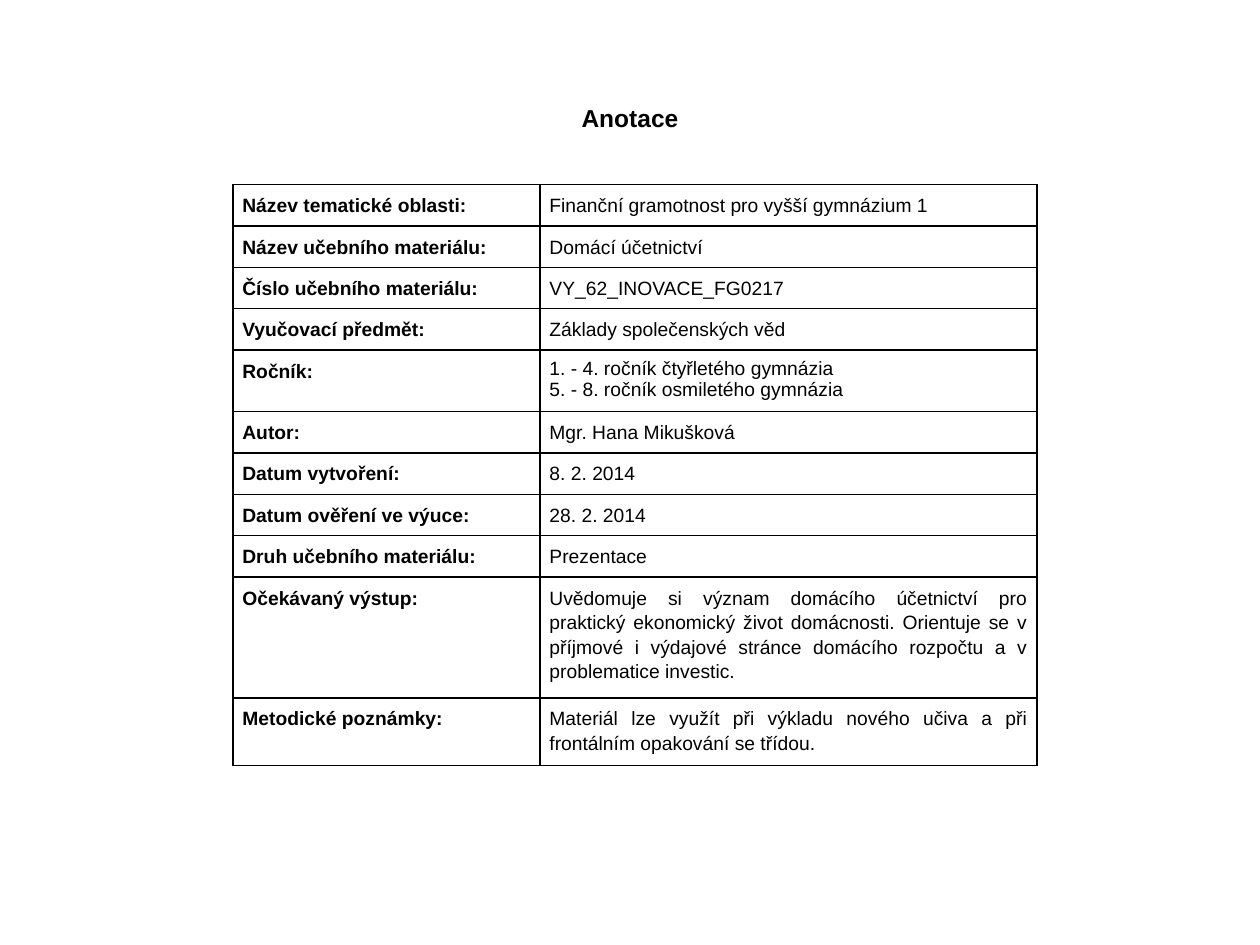
"""Build the annotation slide: a title above a bordered two-column table."""
from lxml.etree import SubElement as Sub
from pptx import Presentation
from pptx.dml.color import RGBColor as Rgb
from pptx.enum.text import MSO_ANCHOR as Anchor, PP_ALIGN as Align
from pptx.oxml.ns import qn
from pptx.util import Pt

TITLE = "Anotace"
ROWS = [
    ("Název tematické oblasti:", ["Finanční gramotnost pro vyšší gymnázium 1"]),
    ("Název učebního materiálu:", ["Domácí účetnictví"]),
    ("Číslo učebního materiálu:", ["VY_62_INOVACE_FG0217"]),
    ("Vyučovací předmět:", ["Základy společenských věd"]),
    ("Ročník:", ["1. - 4. ročník čtyřletého gymnázia",
                 "5. - 8. ročník osmiletého gymnázia"]),
    ("Autor:", ["Mgr. Hana Mikušková"]),
    ("Datum vytvoření:", ["8. 2. 2014"]),
    ("Datum ověření ve výuce:", ["28. 2. 2014"]),
    ("Druh učebního materiálu:", ["Prezentace"]),
    ("Očekávaný výstup:", [
        "Uvědomuje si význam domácího účetnictví pro praktický ekonomický život "
        "domácnosti. Orientuje se v příjmové i výdajové stránce domácího rozpočtu "
        "a v problematice investic."]),
    ("Metodické poznámky:", [
        "Materiál lze využít při výkladu nového učiva a při frontálním "
        "opakování se třídou."]),
]
THEME = {"font": "Arial", "ink": "000000", "title": 14, "body": 11, "line": 1}
PAGE = (720, 540)
HEAD = (0, 49, 720, 36)
LEFT, TOP = 133.2, 105.5
COLS = (175.5, 283.8)
BASE = 23.65
TALL = {"Ročník:": 35.1, "Očekávaný výstup:": 69.1, "Metodické poznámky:": 38.7}
PAD_X, PAD_Y = 5.3, 4.3


def write(par, text, size, bold, align, space=1.0):
    par.alignment = align
    par.line_spacing = space
    run = par.add_run()
    run.text = text
    font = run.font
    font.name, font.size, font.bold = THEME["font"], Pt(size), bold
    font.color.rgb = Rgb.from_string(THEME["ink"])


def frame(cell):
    props = cell._tc.get_or_add_tcPr()
    for side in ("lnL", "lnR", "lnT", "lnB"):
        line = Sub(props, qn(f"a:{side}"), w=str(Pt(THEME["line"])))
        fill = Sub(line, qn("a:solidFill"))
        Sub(fill, qn("a:srgbClr"), val=THEME["ink"])
    cell.fill.background()


def fill_cell(cell, lines, bold, align):
    cell.margin_left = cell.margin_right = Pt(PAD_X)
    cell.margin_top = cell.margin_bottom = Pt(PAD_Y)
    cell.vertical_anchor = Anchor.TOP
    frame(cell)
    many = len(lines) > 1
    body = cell.text_frame
    for i, text in enumerate(lines):
        par = body.add_paragraph() if i else body.paragraphs[0]
        write(par, text, THEME["body"], bold,
              Align.LEFT if many else align, 1.0 if many else 1.15)


def add_title(slide):
    title = slide.shapes.title
    title.left, title.top, title.width, title.height = map(Pt, HEAD)
    body = title.text_frame
    body.word_wrap = False
    body.vertical_anchor = Anchor.MIDDLE
    write(body.paragraphs[0], TITLE, THEME["title"], True, Align.CENTER)


def add_grid(slide):
    tall = [TALL.get(label, BASE) for label, _ in ROWS]
    grid = slide.shapes.add_table(len(ROWS), len(COLS), Pt(LEFT), Pt(TOP),
                                  Pt(sum(COLS)), Pt(sum(tall))).table
    grid.first_row = grid.horz_banding = False
    for col, width in zip(grid.columns, COLS):
        col.width = Pt(width)
    for row, height, (label, lines) in zip(grid.rows, tall, ROWS):
        row.height = Pt(height)
        fill_cell(row.cells[0], [label], True, Align.LEFT)
        fill_cell(row.cells[1], lines, False, Align.JUSTIFY)


def main():
    deck = Presentation()
    deck.slide_width, deck.slide_height = map(Pt, PAGE)
    slide = deck.slides.add_slide(deck.slide_layouts[5])
    add_title(slide)
    add_grid(slide)
    deck.save("out.pptx")


if __name__ == "__main__":
    main()
